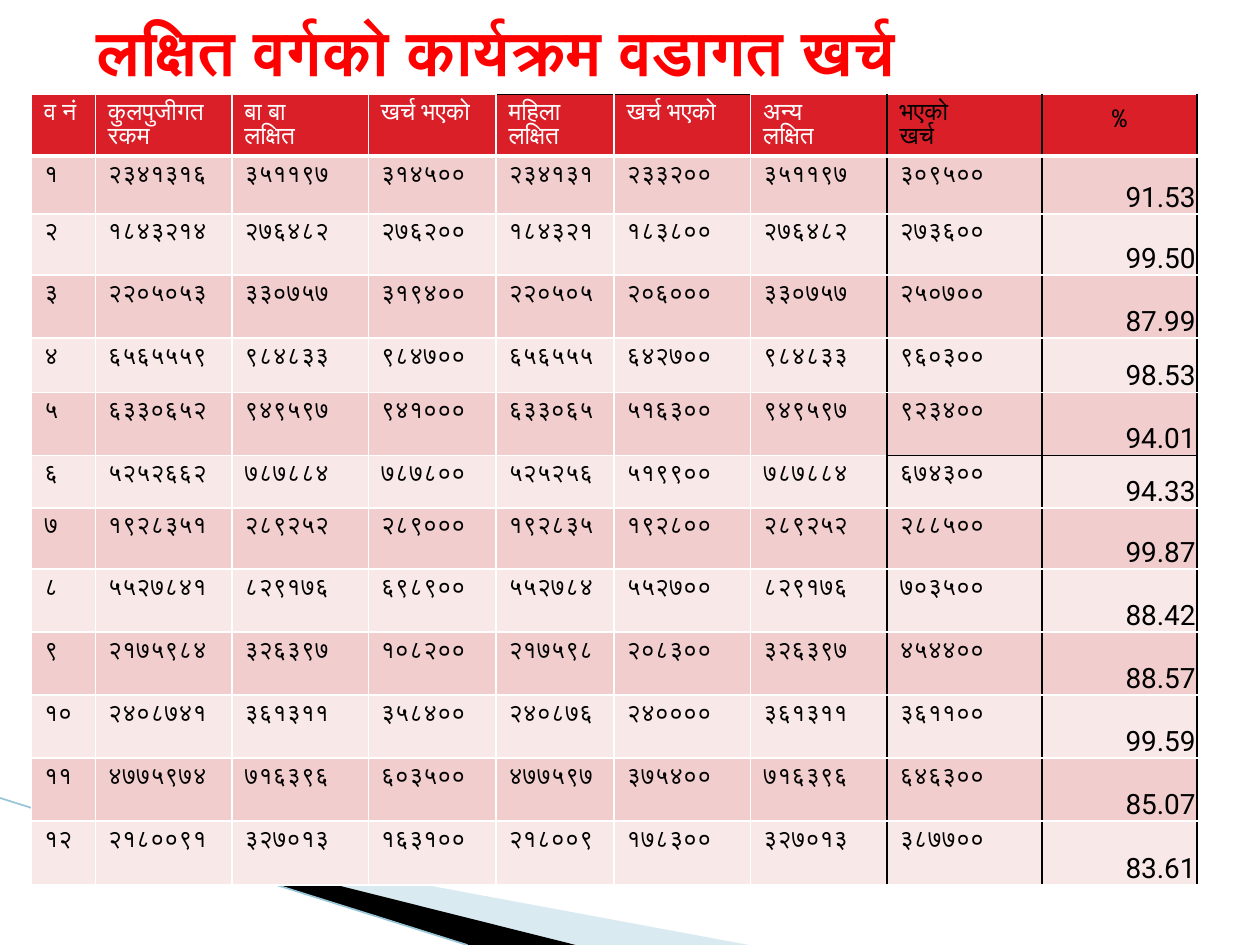
"""Build a slide with a table of spending by ward for target groups."""
from lxml.etree import SubElement
from pptx import Presentation
from pptx.dml.color import RGBColor
from pptx.enum.shapes import MSO_CONNECTOR as Link
from pptx.enum.text import MSO_ANCHOR as Anchor, PP_ALIGN as Align
from pptx.oxml.ns import qn
from pptx.util import Pt

RED = RGBColor(0xFF, 0x00, 0x00)
HEAD = RGBColor(0xDA, 0x1F, 0x28)
ROSE = RGBColor(0xF1, 0xCD, 0xCD)
PALE = RGBColor(0xF8, 0xE8, 0xE8)
WHITE = RGBColor(0xFF, 0xFF, 0xFF)
BLACK = RGBColor(0x00, 0x00, 0x00)
SKY = RGBColor(0xA0, 0xCB, 0xDC)
TEAL = RGBColor(0x97, 0xC5, 0xD8)

TITLE = "लक्षित वर्गको कार्यक्रम वडागत खर्च"
ROWS = [
    ("व नं", "कुलपुजीगत रकम", "बा बा\nलक्षित", "खर्च भएको", "महिला\nलक्षित",
     "खर्च भएको", "अन्य\nलक्षित", "भएको\nखर्च", "%"),
    ("१", "२३४१३१६", "३५११९७", "३१४५००", "२३४१३१", "२३३२००", "३५११९७", "३०९५००", "91.53"),
    ("२", "१८४३२१४", "२७६४८२", "२७६२००", "१८४३२१", "१८३८००", "२७६४८२", "२७३६००", "99.50"),
    ("३", "२२०५०५३", "३३०७५७", "३१९४००", "२२०५०५", "२०६०००", "३३०७५७", "२५०७००", "87.99"),
    ("४", "६५६५५५९", "९८४८३३", "९८४७००", "६५६५५५", "६४२७००", "९८४८३३", "९६०३००", "98.53"),
    ("५", "६३३०६५२", "९४९५९७", "९४१०००", "६३३०६५", "५१६३००", "९४९५९७", "९२३४००", "94.01"),
    ("६", "५२५२६६२", "७८७८८४", "७८७८००", "५२५२५६", "५१९९००", "७८७८८४", "६७४३००", "94.33"),
    ("७", "१९२८३५१", "२८९२५२", "२८९०००", "१९२८३५", "१९२८००", "२८९२५२", "२८८५००", "99.87"),
    ("८", "५५२७८४१", "८२९१७६", "६९८९००", "५५२७८४", "५५२७००", "८२९१७६", "७०३५००", "88.42"),
    ("९", "२१७५९८४", "३२६३९७", "१०८२००", "२१७५९८", "२०८३००", "३२६३९७", "४५४४००", "88.57"),
    ("१०", "२४०८७४१", "३६१३११", "३५८४००", "२४०८७६", "२४००००", "३६१३११", "३६११००", "99.59"),
    ("११", "४७७५९७४", "७१६३९६", "६०३५००", "४७७५९७", "३७५४००", "७१६३९६", "६४६३००", "85.07"),
    ("१२", "२१८००९१", "३२७०१३", "१६३१००", "२१८००९", "१७८३००", "३२७०१३", "३८७७००", "83.61"),
]
WIDE = [36.5, 78, 78, 73, 67.5, 78, 78, 88.5, 88.5]
HIGH = [35, 33, 35, 36, 31, 36, 30, 35, 36, 36, 36, 36, 36.5]
WEDGES = [
    (SKY, 40, [(39.6, 468.5), (428.4, 540), (328.3, 540), (39.6, 468)]),
    (BLACK, 100, [(38.2, 467.3), (329, 540), (267.8, 540), (38.9, 468)]),
]


def wedge(slide, color, alpha, pts):
    pen = slide.shapes.build_freeform(*pts[0], scale=12700)
    pen.add_line_segments(pts[1:], close=True)
    shape = pen.convert_to_shape()
    shape.shadow.inherit = False
    shape.fill.solid()
    shape.fill.fore_color.rgb = color
    shape.line.fill.background()
    if alpha < 100:
        tint = shape.fill._xPr.find(".//" + qn("a:srgbClr"))
        SubElement(tint, qn("a:alpha"), val=str(alpha * 1000))


def edge(cell, side, color, size=1):
    line = SubElement(cell._tc.get_or_add_tcPr(), qn("a:ln" + side), w=str(Pt(size)))
    fill = SubElement(line, qn("a:solidFill"))
    SubElement(fill, qn("a:srgbClr"), val=str(color))


def frame(cell, row, col):
    top = (row == 0 and col in (4, 5)) or (row == 6 and col > 6)
    low = row == 5 and col > 6
    edge(cell, "L", BLACK if col > 6 else WHITE)
    edge(cell, "R", BLACK if col > 5 else WHITE)
    edge(cell, "T", BLACK if top else WHITE)
    edge(cell, "B", BLACK if low else WHITE, 1 if row else 3)


def write(cell, row, col, text):
    rate = col == 8 and row > 0
    cell.text = text
    if rate:
        cell.vertical_anchor = Anchor.BOTTOM
        cell.margin_left = cell.margin_right = cell.margin_top = Pt(0.7)
        cell.margin_bottom = Pt(0)
    for para in cell.text_frame.paragraphs:
        if col < 8:
            para.line_spacing = Pt(14)
        else:
            para.alignment = Align.RIGHT if rate else Align.CENTER
        font = para.font
        font.name = "Roboto" if rate else "Noto Sans Mono"
        font.size = Pt(16 if rate else 14)
        font.bold = False
        font.color.rgb = WHITE if row == 0 and col < 7 else BLACK


def main():
    deck = Presentation()
    deck.slide_width, deck.slide_height = Pt(720), Pt(540)
    slide = deck.slides.add_slide(deck.slide_layouts[6])
    for item in WEDGES:
        wedge(slide, *item)
    line = slide.shapes.add_connector(Link.STRAIGHT, Pt(0), Pt(456), Pt(267), Pt(540))
    line.line.color.rgb = TEAL
    line.line.width = Pt(0.95)
    SubElement(line._element.spPr, qn("a:effectLst"))

    box = slide.shapes.add_textbox(Pt(48), Pt(2), Pt(641.5), Pt(54)).text_frame
    box.word_wrap = True
    box.vertical_anchor = Anchor.MIDDLE
    box.text = TITLE
    font = box.paragraphs[0].font
    font.name, font.size, font.bold = "Calibri", Pt(36), True
    font.color.rgb = RED

    grid = slide.shapes.add_table(len(ROWS), len(WIDE), Pt(18), Pt(54),
                                  Pt(sum(WIDE)), Pt(sum(HIGH))).table
    for col, size in zip(grid.columns, WIDE):
        col.width = Pt(size)
    for row, size in zip(grid.rows, HIGH):
        row.height = Pt(size)
    for r, texts in enumerate(ROWS):
        for c, text in enumerate(texts):
            cell = grid.cell(r, c)
            frame(cell, r, c)
            cell.fill.solid()
            cell.fill.fore_color.rgb = HEAD if r == 0 else ROSE if r % 2 else PALE
            write(cell, r, c, text)
    deck.save("out.pptx")


if __name__ == "__main__":
    main()
